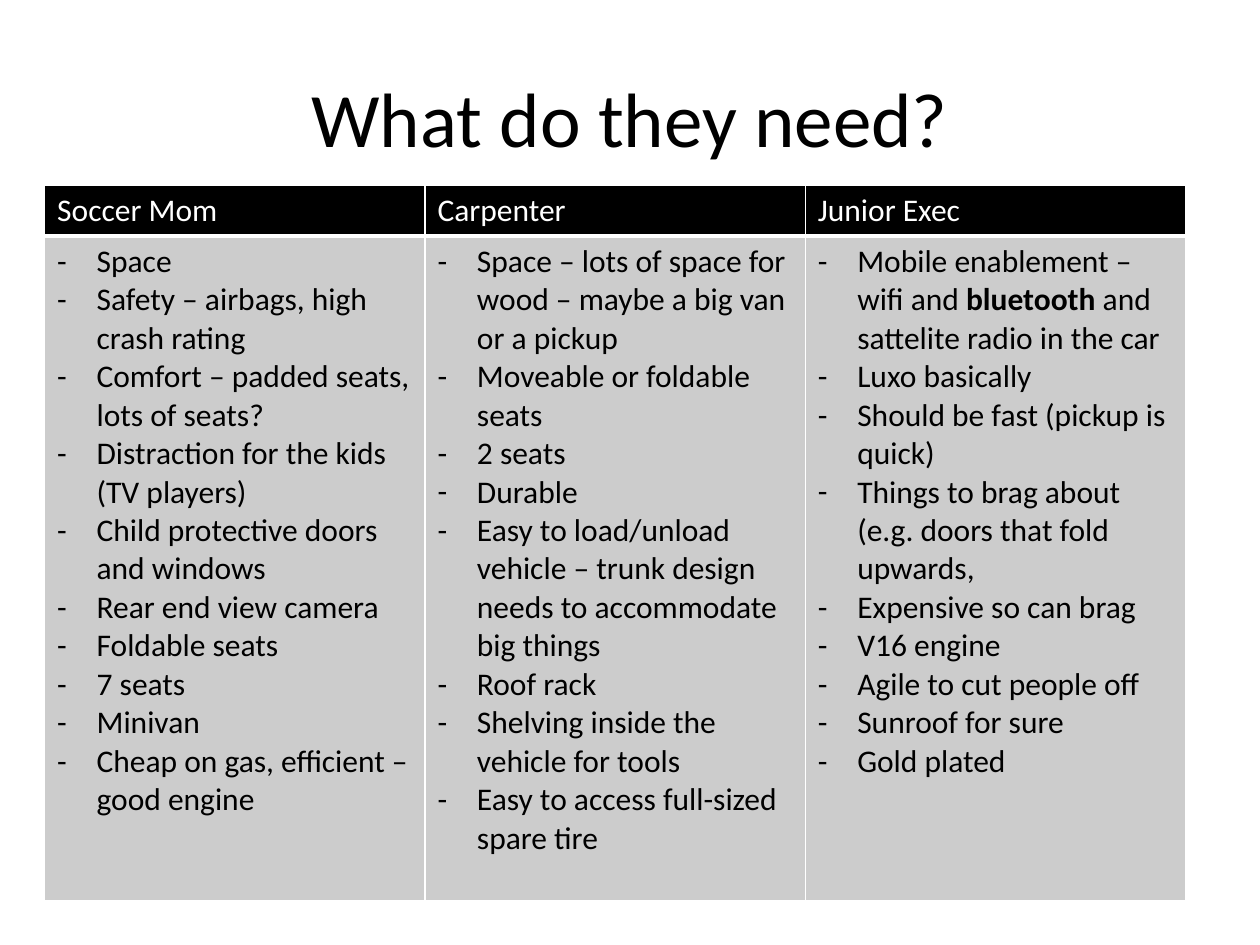
import pptx
import pptx.dml.color
import pptx.enum.text
import pptx.oxml
import pptx.oxml.ns
import pptx.util
from lxml import etree

Pt = pptx.util.Pt
BLACK, WHITE, GREY = "000000", "FFFFFF", "CCCCCC"
INDENT = 22.5

# Each item is a string, or a list of (text, bold) runs
NEEDS = {
    "Soccer Mom": [
        "Space",
        "Safety – airbags, high crash rating",
        "Comfort – padded seats, lots of seats?",
        "Distraction for the kids (TV players)",
        "Child protective doors and windows",
        "Rear end view camera",
        "Foldable seats",
        "7 seats",
        "Minivan",
        "Cheap on gas, efficient – good engine",
    ],
    "Carpenter": [
        "Space – lots of space for wood – maybe a big van or a pickup",
        "Moveable or foldable seats",
        "2 seats",
        "Durable",
        "Easy to load/unload vehicle – trunk design needs to accommodate big things",
        "Roof rack",
        "Shelving inside the vehicle for tools",
        "Easy to access full-sized spare tire",
    ],
    "Junior Exec": [
        [("Mobile enablement – wifi and ", False), ("bluetooth", True),
         (" and sattelite radio in the car", False)],
        "Luxo basically",
        "Should be fast (pickup is quick)",
        "Things to brag about (e.g. doors that fold upwards,",
        "Expensive so can brag",
        "V16 engine",
        "Agile to cut people off",
        "Sunroof for sure",
        "Gold plated",
    ],
}


def color(value):
    return pptx.dml.color.RGBColor.from_string(value)


def set_attributes(target, values):
    for name, value in values.items():
        setattr(target, name, value)


class SlideBuilder:
    font = "Calibri"

    def __init__(self, slide):
        self.slide = slide

    def add_text(self, paragraph, content, size, text_color):
        runs = [(content, False)] if isinstance(content, str) else content
        for text, bold in runs:
            run = paragraph.add_run()
            run.text = text
            set_attributes(run.font, {"name": self.font, "size": Pt(size), "bold": bold})
            run.font.color.rgb = color(text_color)

    def title(self, text, left, top, width, height):
        shape = self.slide.shapes.add_textbox(Pt(left), Pt(top), Pt(width), Pt(height))
        set_attributes(shape.text_frame, {
            "word_wrap": True,
            "vertical_anchor": pptx.enum.text.MSO_ANCHOR.MIDDLE,
        })
        paragraph = shape.text_frame.paragraphs[0]
        paragraph.alignment = pptx.enum.text.PP_ALIGN.CENTER
        self.add_text(paragraph, text, 44, BLACK)

    def bullet(self, paragraph):
        properties = paragraph._p.get_or_add_pPr()
        properties.set("marL", str(Pt(INDENT)))
        properties.set("indent", str(-Pt(INDENT)))
        qn = pptx.oxml.ns.qn
        etree.SubElement(properties, qn("a:buFont"), typeface=self.font)
        etree.SubElement(properties, qn("a:buChar"), char="-")

    def cell(self, cell, items, text_color, fill, bottom_border=1, bulleted=False):
        # Borders go before the fill in the cell properties
        properties = cell._tc.get_or_add_tcPr()
        for side, width in {"L": 1, "R": 1, "T": 1, "B": bottom_border}.items():
            properties.append(pptx.oxml.parse_xml(
                f'<a:ln{side} {pptx.oxml.ns.nsdecls("a")} w="{Pt(width)}"><a:solidFill>'
                f'<a:srgbClr val="{WHITE}"/></a:solidFill></a:ln{side}>'))
        cell.fill.solid()
        cell.fill.fore_color.rgb = color(fill)
        for index, item in enumerate(items):
            frame = cell.text_frame
            paragraph = frame.add_paragraph() if index else frame.paragraphs[0]
            if bulleted:
                self.bullet(paragraph)
            self.add_text(paragraph, item, 18, text_color)

    def table(self, columns, left, top, width, row_heights):
        table = self.slide.shapes.add_table(
            len(row_heights), len(columns),
            Pt(left), Pt(top), Pt(width), Pt(sum(row_heights))).table
        set_attributes(table, {"first_row": False, "horz_banding": False})
        for row, height in zip(table.rows, row_heights):
            row.height = Pt(height)
        for index, (heading, items) in enumerate(columns.items()):
            table.columns[index].width = Pt(width / len(columns))
            self.cell(table.cell(0, index), [heading], WHITE, BLACK, bottom_border=3)
            self.cell(table.cell(1, index), items, BLACK, GREY, bulleted=True)


def main():
    presentation = pptx.Presentation()
    set_attributes(presentation, {"slide_width": Pt(720), "slide_height": Pt(540)})
    builder = SlideBuilder(presentation.slides.add_slide(presentation.slide_layouts[6]))

    # Heading
    builder.title("What do they need?", 36, 21.6, 648, 90)

    # One column of needs per customer
    builder.table(NEEDS, 25.5, 105.7, 652, [29.2, 380])

    presentation.save("out.pptx")


if __name__ == "__main__":
    main()
